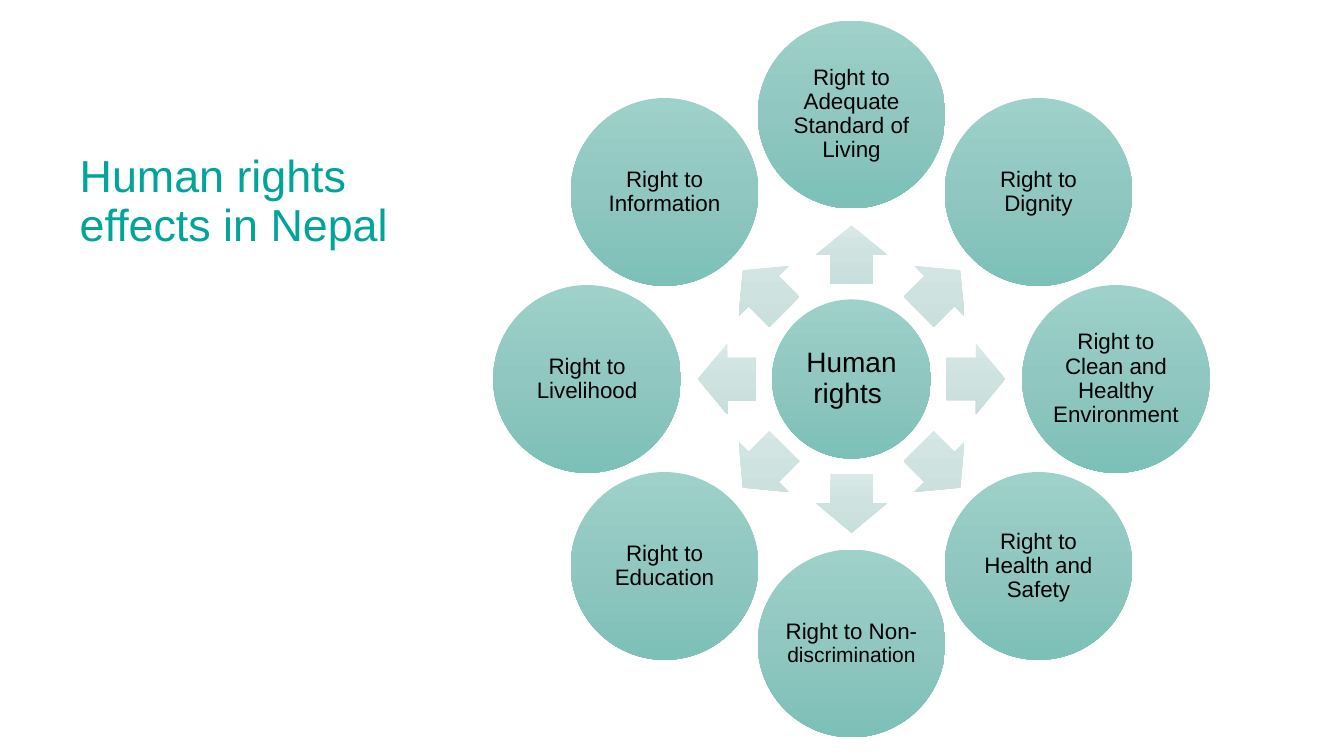
import math

from pptx import Presentation, util as u
from pptx.dml.color import RGBColor
from pptx.enum import shapes, text
from pptx.oxml import parse_xml
from pptx.oxml.ns import nsdecls, qn

FONT = "Arial"
CIRCLE_SHADES = ("9DD1CA", "90C7C0", "7CC0B8")
ARROW_SHADES = ("D9E9E7", "CEE2DF", "C7DFDC")
RIGHTS = [
    [("Right to Adequate Standard of Living", 16)],
    [("Right to Dignity", 16)],
    [("Right to Clean and Healthy Environment", 16)],
    [("Right to Health and Safety", 16)],
    [("Right to Non-", 16), ("discrimination", 15)],
    [("Right to Education", 16)],
    [("Right to Livelihood", 16)],
    [("Right to Information", 16)],
]


def color(value):
    """Turn a hex string into a colour."""
    return RGBColor.from_string(value)


def shade(shape, shades):
    """Fill a shape from top to bottom, whatever its rotation."""
    shape.shadow.inherit = False
    shape.line.fill.background()
    shape.fill.gradient()
    stops = "".join(
        f'<a:gs pos="{index * 50000}"><a:srgbClr val="{value}"/></a:gs>'
        for index, value in enumerate(shades))
    gradient = parse_xml(
        f'<a:gradFill {nsdecls("a")} rotWithShape="0"><a:gsLst>{stops}</a:gsLst>'
        '<a:lin ang="5400000" scaled="0"/></a:gradFill>')
    properties = shape._element.spPr
    properties.replace(properties.find(qn("a:gradFill")), gradient)


def write(frame, lines, ink, align):
    """Write each (wording, size) pair as a paragraph."""
    frame.word_wrap = True
    for index, (wording, size) in enumerate(lines):
        para = frame.add_paragraph() if index else frame.paragraphs[0]
        para.alignment = align
        para.line_spacing = 0.9
        span = para.add_run()
        span.text = wording
        span.font.name = FONT
        span.font.size = u.Pt(size)
        span.font.color.rgb = color(ink)


def add_centered(page, kind, x, y, width, height, shades):
    """Add a shaded shape centred on a point given in centimetres."""
    shape = page.shapes.add_shape(
        kind, u.Cm(x - width / 2), u.Cm(y - height / 2), u.Cm(width), u.Cm(height))
    shade(shape, shades)
    return shape


def add_circle(page, x, y, diameter, lines):
    """Add a circle with centred wording."""
    circle = add_centered(
        page, shapes.MSO_SHAPE.OVAL, x, y, diameter, diameter, CIRCLE_SHADES)
    frame = circle.text_frame
    frame.margin_left = frame.margin_right = frame.margin_top = frame.margin_bottom = 0
    frame.vertical_anchor = text.MSO_ANCHOR.MIDDLE
    write(frame, lines, "000000", text.PP_ALIGN.CENTER)


def add_arrow(page, x, y, width, height, angle):
    """Add a block arrow that points along the angle."""
    arrow = add_centered(
        page, shapes.MSO_SHAPE.RIGHT_ARROW, x, y, width, height, ARROW_SHADES)
    arrow.adjustments[0] = 0.6
    arrow.adjustments[1] = 0.5
    arrow.rotation = angle % 360


def add_title(page, left, top, width, height):
    """Place the slide title at the bottom of its box."""
    box = page.shapes.add_textbox(u.Cm(left), u.Cm(top), u.Cm(width), u.Cm(height))
    box.text_frame.vertical_anchor = text.MSO_ANCHOR.BOTTOM
    write(box.text_frame, [("Human rights effects in Nepal", 32)],
          "00A499", text.PP_ALIGN.LEFT)


def add_wheel(page, left, top, size):
    """Draw the hub and the ring of rights in a square box."""
    diameter = size * 0.262
    ring = (size - diameter) / 2
    x, y = left + size / 2, top + size / 2
    add_circle(page, x, y, size * 0.222, [("Human rights ", 20)])
    for index, lines in enumerate(RIGHTS):
        angle = index * 360 / len(RIGHTS) - 90
        across, down = math.cos(math.radians(angle)), math.sin(math.radians(angle))
        reach = ring * 0.47
        add_arrow(page, x + reach * across, y + reach * down,
                  size * 0.082, size * 0.099, angle)
        add_circle(page, x + ring * across, y + ring * down, diameter, lines)


def main():
    """Build and save the deck."""
    deck = Presentation()
    deck.slide_width, deck.slide_height = u.Cm(33.87), u.Cm(19.05)
    page = deck.slides.add_slide(deck.slide_layouts[6])
    add_title(page, 1.76, 1.76, 9.04, 4.69)
    add_wheel(page, 12.43, 0.52, 18.06)
    deck.save("out.pptx")


if __name__ == "__main__":
    main()
